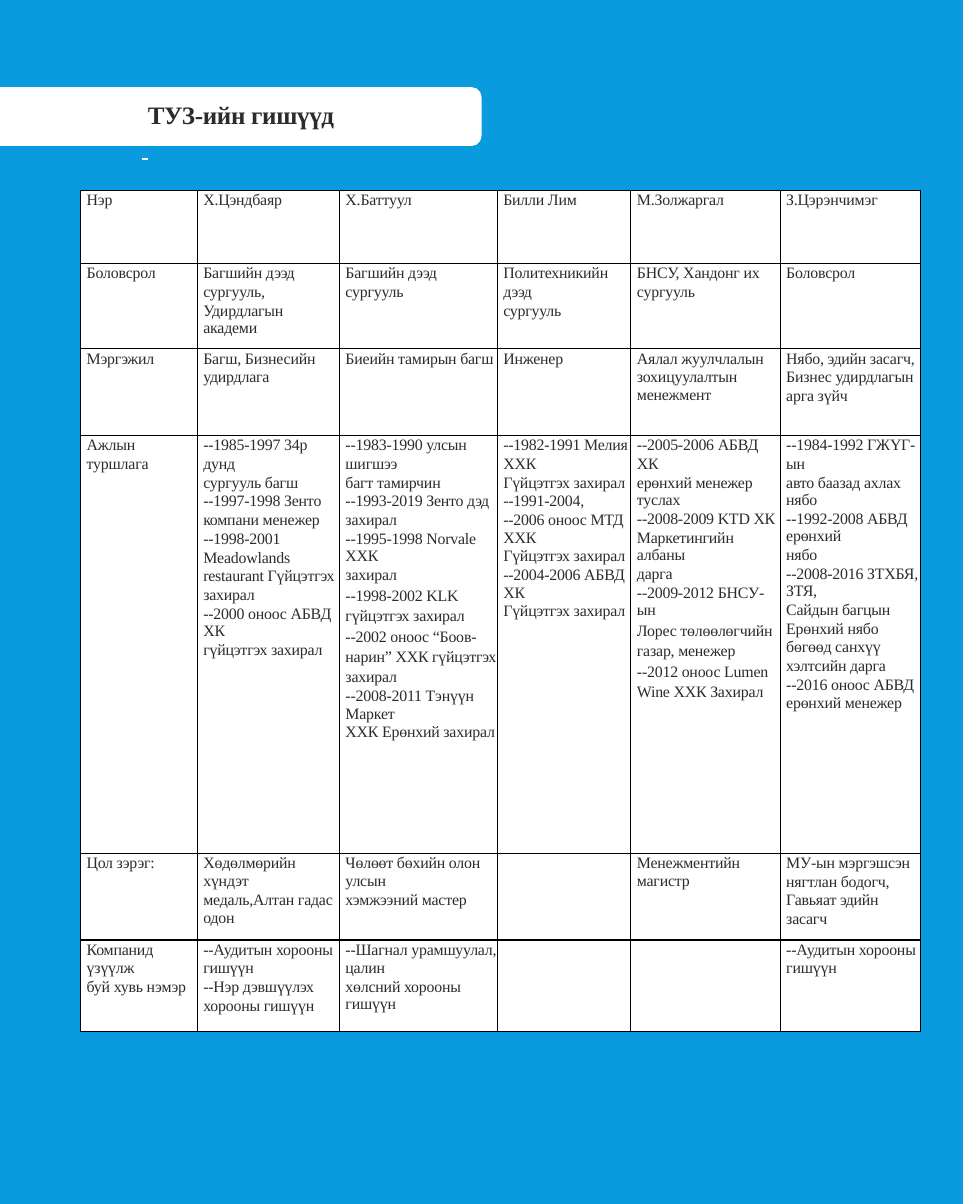
from lxml import etree
from pptx import Presentation
from pptx import util as u
from pptx.dml.color import RGBColor
from pptx.enum import shapes, text
from pptx.oxml import ns

BLUE = RGBColor(0x09, 0x9B, 0xDD)
WHITE = RGBColor(0xFF, 0xFF, 0xFF)
BLACK = RGBColor(0x00, 0x00, 0x00)
INK = RGBColor(0x2C, 0x2C, 0x2C)

# Paragraph styles: line spacing and space before
FIRST = (u.Pt(11.1), u.Pt(0))
NEXT = (None, u.Pt(0.8))
LOOSE = (1.07, u.Pt(0.1))
FIXED = (u.Pt(12.1), u.Pt(0.3))

COLUMN_WIDTHS = [2.46, 3, 3.33, 2.82, 3.15, 2.97]
ROW_HEIGHTS = [1.55, 1.8, 1.83, 8.81, 1.83, 1.93]

# Each cell is a list of paragraphs: a text, or a text with its style
MEMBERS = [
    [["Нэр"], ["Х.Цэндбаяр"], ["Х.Баттуул"], ["Билли Лим"], ["М.Золжаргал"],
     ["З.Цэрэнчимэг"]],
    [["Боловсрол"],
     ["Багшийн дээд сургууль,", "Удирдлагын академи"],
     ["Багшийн дээд сургууль"],
     ["Политехникийн дээд", "сургууль"],
     ["БНСУ, Хандонг их", "сургууль"],
     ["Боловсрол"]],
    [["Мэргэжил"],
     ["Багш, Бизнесийн", "удирдлага"],
     ["Биеийн тамирын багш"],
     ["Инженер"],
     ["Аялал жуулчлалын", "зохицуулалтын менежмент"],
     ["Нябо, эдийн засагч,", ("Бизнес удирдлагын арга зүйч", LOOSE)]],
    [["Ажлын туршлага"],
     ["--1985-1997 34р дунд", "сургууль багш", "--1997-1998 Зенто",
      "компани менежер",
      ("--1998-2001 Meadowlands restaurant Гүйцэтгэх захирал", LOOSE),
      "--2000 оноос АБВД ХК", "гүйцэтгэх захирал"],
     ["--1983-1990 улсын шигшээ", "багт тамирчин", "--1993-2019 Зенто дэд",
      "захирал", "--1995-1998 Norvale ХХК", "захирал",
      ("--1998-2002 KLK гүйцэтгэх захирал", FIXED),
      ("--2002 оноос “Боов- нарин” ХХК гүйцэтгэх захирал", FIXED),
      "--2008-2011 Тэнүүн Маркет", "ХХК Ерөнхий захирал"],
     ["--1982-1991 Мелия ХХК", "Гүйцэтгэх захирал", "--1991-2004,",
      "--2006 оноос МТД ХХК", "Гүйцэтгэх захирал", "--2004-2006 АБВД ХК",
      "Гүйцэтгэх захирал"],
     ["--2005-2006 АБВД ХК", "ерөнхий менежер туслах", "--2008-2009 KTD ХК",
      "Маркетингийн албаны", "дарга", "--2009-2012 БНСУ-ын",
      ("Лорес төлөөлөгчийн газар, менежер", FIXED),
      ("--2012 оноос Lumen Wine ХХК Захирал", FIXED)],
     ["--1984-1992 ГЖҮГ-ын", "авто баазад ахлах нябо",
      "--1992-2008 АБВД ерөнхий", "нябо", "--2008-2016 ЗТХБЯ, ЗТЯ,",
      ("Сайдын багцын Ерөнхий нябо бөгөөд санхүү хэлтсийн дарга", LOOSE),
      ("--2016 оноос АБВД ерөнхий менежер", LOOSE)]],
    [["Цол зэрэг:"],
     ["Хөдөлмөрийн хүндэт", "медаль,Алтан гадас одон"],
     ["Чөлөөт бөхийн олон улсын", "хэмжээний мастер"],
     [],
     ["Менежментийн магистр"],
     ["МУ-ын мэргэшсэн", ("нягтлан бодогч, Гавьяат эдийн засагч", LOOSE)]],
    [["Компанид үзүүлж", "буй хувь нэмэр"],
     ["--Аудитын хорооны", "гишүүн",
      ("--Нэр дэвшүүлэх хорооны гишүүн", LOOSE)],
     ["--Шагнал урамшуулал, цалин", "хөлсний хорооны гишүүн"],
     [],
     [],
     ["--Аудитын хорооны", "гишүүн"]],
]


class BoardSlide:
    font_name = "Times New Roman"

    def __init__(self, presentation):
        self.slide = presentation.slides.add_slide(presentation.slide_layouts[6])
        background = self.slide.background.fill
        background.solid()
        background.fore_color.rgb = BLUE

    def style(self, paragraph, size, bold=False, tracking=-10):
        """Set the font; tracking is in hundredths of a point."""
        font = paragraph.font
        font.name, font.size, font.bold = self.font_name, u.Pt(size), bold
        font.color.rgb = INK
        font._rPr.set("spc", str(tracking))

    def table(self, left, top, widths, heights, rows):
        frame = self.slide.shapes.add_table(
            len(heights), len(widths), u.Cm(left), u.Cm(top),
            u.Cm(sum(widths)), u.Cm(sum(heights)))
        table = frame.table
        table.first_row = table.horz_banding = False
        for column, width in zip(table.columns, widths):
            column.width = u.Cm(width)
        for row, height, contents in zip(table.rows, heights, rows):
            row.height = u.Cm(height)
            for cell, paragraphs in zip(row.cells, contents):
                self.cell(cell, paragraphs)

    def cell(self, cell, paragraphs):
        cell.margin_left = u.Cm(0.13)
        cell.margin_right = cell.margin_top = cell.margin_bottom = 0
        cell.fill.solid()
        cell.fill.fore_color.rgb = WHITE
        self.borders(cell)
        for index, item in enumerate(paragraphs):
            default = NEXT if index else FIRST
            words, spacing = (item, default) if isinstance(item, str) else item
            frame = cell.text_frame
            paragraph = frame.add_paragraph() if index else frame.paragraphs[0]
            paragraph.text = words
            paragraph.line_spacing, paragraph.space_before = spacing
            self.style(paragraph, 9.5)

    def borders(self, cell):
        properties = cell._tc.get_or_add_tcPr()
        for index, side in enumerate(("lnL", "lnR", "lnT", "lnB")):
            line = etree.Element(ns.qn(f"a:{side}"), w=str(u.Pt(0.75)))
            fill = etree.SubElement(line, ns.qn("a:solidFill"))
            etree.SubElement(fill, ns.qn("a:srgbClr"), val=str(BLACK))
            properties.insert(index, line)

    def banner(self, left, top, width, height):
        """Bar with rounded right corners, given by its place as seen."""
        shape = self.slide.shapes.add_shape(
            shapes.MSO_SHAPE.ROUND_2_SAME_RECTANGLE,
            u.Cm(left + (width - height) / 2), u.Cm(top + (height - width) / 2),
            u.Cm(height), u.Cm(width))
        shape.rotation = 90
        shape.shadow.inherit = False
        shape.fill.solid()
        shape.fill.fore_color.rgb = WHITE
        shape.line.fill.background()

    def title(self, words, left, top, width, height):
        frame = self.slide.shapes.add_textbox(
            u.Cm(left), u.Cm(top), u.Cm(width), u.Cm(height)).text_frame
        frame.word_wrap = True
        frame.vertical_anchor = text.MSO_ANCHOR.TOP
        frame.margin_left = frame.margin_right = 0
        frame.margin_top = frame.margin_bottom = u.Cm(0.03)
        paragraph = frame.paragraphs[0]
        paragraph.text = words
        paragraph.space_before = u.Pt(1.1)
        self.style(paragraph, 15, bold=True, tracking=-20)

    def dash(self, left, top, width):
        line = self.slide.shapes.add_connector(
            shapes.MSO_CONNECTOR.STRAIGHT, u.Cm(left), u.Cm(top),
            u.Cm(left + width), u.Cm(top))
        line.line.color.rgb = WHITE
        line.line.width = u.Pt(1.5)
        etree.SubElement(line._element.spPr, ns.qn("a:effectLst"))


def main():
    presentation = Presentation()
    presentation.slide_width = u.Cm(20.32)
    presentation.slide_height = u.Cm(25.4)
    board = BoardSlide(presentation)
    board.table(1.7, 4.01, COLUMN_WIDTHS, ROW_HEIGHTS, MEMBERS)
    board.banner(0, 1.84, 10.16, 1.24)
    board.title("ТУЗ-ийн гишүүд", 3.12, 2.06, 5.4, 0.8)
    board.dash(3, 3.35, 0.13)
    presentation.save("out.pptx")


if __name__ == "__main__":
    main()
